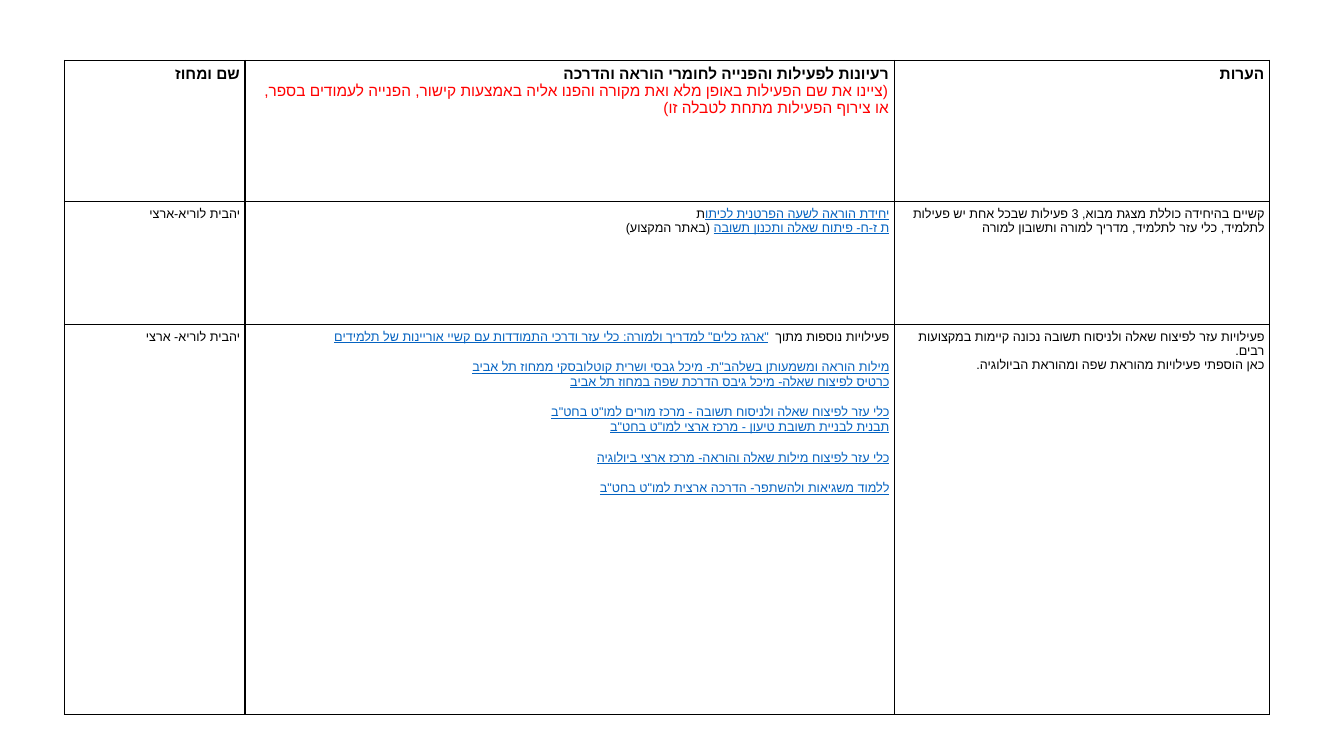
"""Build a right-to-left slide with a table of teaching activities."""
from dataclasses import dataclass

from lxml.etree import SubElement
from pptx import Presentation
from pptx.dml.color import RGBColor as Rgb
from pptx.enum.text import PP_ALIGN as Align
from pptx.oxml import parse_xml
from pptx.oxml.ns import nsdecls, qn
from pptx.util import Inches, Pt

BLACK = Rgb(0x00, 0x00, 0x00)
RED = Rgb(0xFF, 0x00, 0x00)
BLUE = Rgb(0x05, 0x63, 0xC1)
FONT = "Arial"
HEAD, BODY = 11, 9
COLS = (1.79, 6.44, 3.72)
ROWS = (1.4, 1.22, 3.87)
PAD = Inches(0.05)


@dataclass(frozen=True)
class Span:
    text: str
    color: Rgb = BLACK
    bold: bool = False
    line: bool = False


@dataclass(frozen=True)
class Para:
    spans: tuple[Span, ...]
    after: int = 0


def title(text: str) -> Span:
    return Span(text, bold=True)


def link(text: str) -> Span:
    return Span(text, BLUE, line=True)


def one(*spans: Span) -> list[Para]:
    return [Para(spans)]


TABLE = [
    [
        one(title('שם ומחוז')),
        one(
            title('רעיונות לפעילות והפנייה לחומרי הוראה והדרכה \n'),
            Span('(ציינו את שם הפעילות באופן מלא ואת מקורה והפנו אליה באמצעות קישור, '
                 'הפנייה לעמודים בספר, או צירוף הפעילות מתחת לטבלה זו)', RED),
        ),
        one(title('הערות')),
    ],
    [
        one(Span('יהבית לוריא-ארצי')),
        [
            Para((link('יחידת הוראה לשעה הפרטנית לכיתו'), Span('ת'))),
            Para((link('ת ז-ח- פיתוח שאלה ותכנון תשובה'), Span(' (באתר המקצוע)'))),
        ],
        one(Span('קשיים בהיחידה כוללת מצגת מבוא, 3 פעילות שבכל אחת יש פעילות לתלמיד, '
                 'כלי עזר לתלמיד, מדריך למורה ותשובון למורה')),
    ],
    [
        one(Span('יהבית לוריא- ארצי')),
        [Para(spans, 12) for spans in (
            (Span('פעילויות נוספות מתוך  '),
             link('"ארגז כלים" למדריך ולמורה: כלי עזר ודרכי התמודדות '
                  'עם קשיי אוריינות של תלמידים')),
            (link('מילות הוראה ומשמעותן בשלהב"ת- מיכל גבסי ושרית קוטלובסקי ממחוז תל אביב'),
             Span(' \n'),
             link('כרטיס לפיצוח שאלה- מיכל גיבס הדרכת שפה במחוז תל אביב')),
            (link('כלי עזר לפיצוח שאלה ולניסוח תשובה - מרכז מורים למו"ט בחט"ב\n'
                  'תבנית לבניית תשובת טיעון - מרכז ארצי למו"ט בחט"ב'),),
            (link('כלי עזר לפיצוח מילות שאלה והוראה- מרכז ארצי ביולוגיה'),),
            (link('ללמוד משגיאות ולהשתפר- הדרכה ארצית למו"ט בחט"ב'),),
        )],
        one(Span('פעילויות עזר לפיצוח שאלה ולניסוח תשובה נכונה קיימות במקצועות רבים.\n'
                 'כאן הוספתי פעילויות מהוראת שפה ומהוראת הביולוגיה. ')),
    ],
]


def add_span(para, span: Span, size: int) -> None:
    for i, text in enumerate(span.text.split("\n")):
        if i:
            para.add_line_break()
            mark = SubElement(para._p.findall(qn("a:br"))[-1], qn("a:rPr"))
            mark.set("sz", str(size * 100))
        if not text:
            continue
        run = para.add_run()
        run.text = text
        font = run.font
        font.name, font.size = FONT, Pt(size)
        font.bold, font.underline = span.bold, span.line
        font.color.rgb = span.color
        SubElement(run._r.get_or_add_rPr(), qn("a:cs")).set("typeface", FONT)


def add_edges(cell) -> None:
    props = cell._tc.get_or_add_tcPr()
    for i, side in enumerate("LRTB"):
        props.insert(i, parse_xml(
            f'<a:ln{side} {nsdecls("a")} w="{Pt(1)}"><a:solidFill>'
            f'<a:srgbClr val="{BLACK}"/></a:solidFill></a:ln{side}>'))


def fill_cell(cell, paras: list[Para], size: int) -> None:
    cell.margin_left = cell.margin_right = PAD
    cell.margin_top = cell.margin_bottom = PAD
    cell.fill.background()
    add_edges(cell)
    frame = cell.text_frame
    for i, item in enumerate(paras):
        para = frame.add_paragraph() if i else frame.paragraphs[0]
        para.alignment = Align.RIGHT
        para.space_after = Pt(item.after)
        para._p.get_or_add_pPr().set("rtl", "1")
        for span in item.spans:
            add_span(para, span, size)


def main() -> None:
    deck = Presentation()
    deck.slide_width, deck.slide_height = Inches(13.33), Inches(7.5)
    slide = deck.slides.add_slide(deck.slide_layouts[6])
    table = slide.shapes.add_table(
        len(ROWS), len(COLS), Inches(0.64), Inches(0.6),
        Inches(sum(COLS)), Inches(sum(ROWS))).table
    table.first_row = table.horz_banding = False
    for col, width in zip(table.columns, COLS):
        col.width = Inches(width)
    for r, (row, high) in enumerate(zip(TABLE, ROWS)):
        table.rows[r].height = Inches(high)
        for c, paras in enumerate(row):
            fill_cell(table.cell(r, c), paras, BODY if r else HEAD)
    deck.save("out.pptx")


if __name__ == "__main__":
    main()
